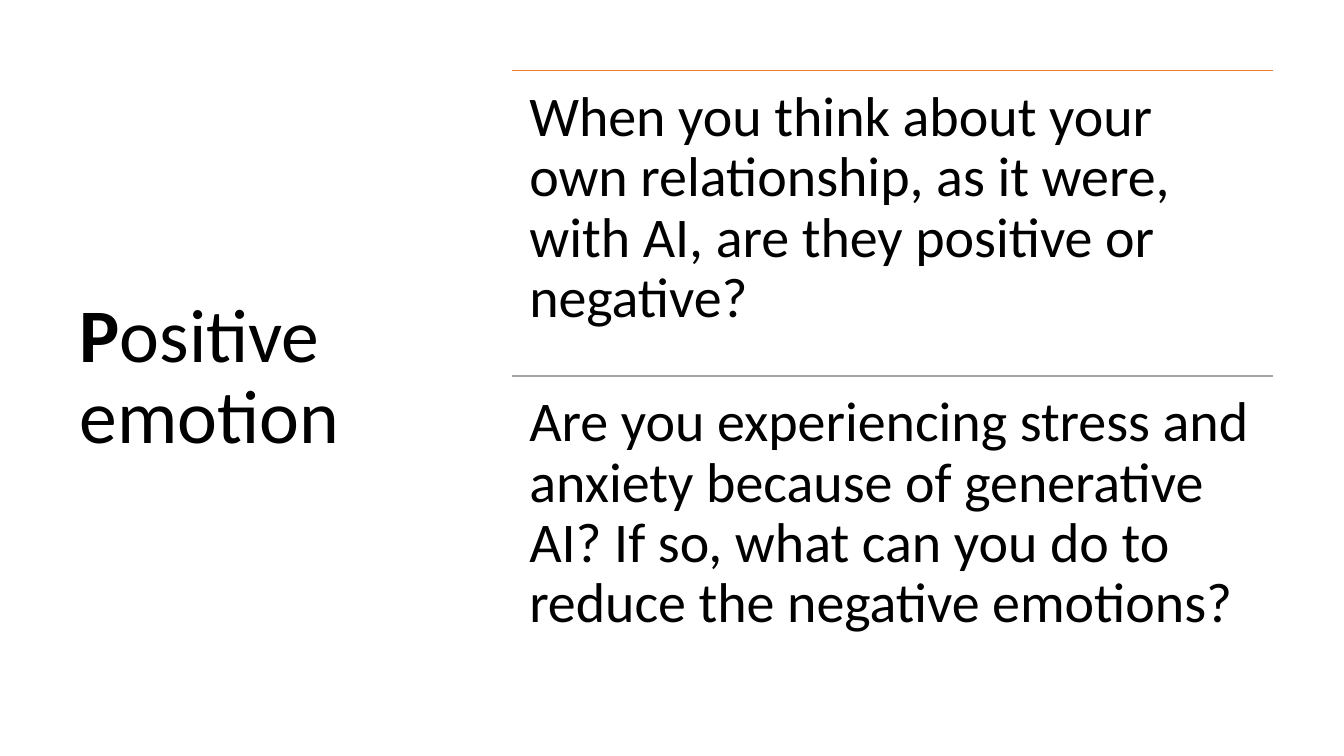
from lxml import etree
from pptx import Presentation
from pptx import util as u
from pptx.dml.color import RGBColor
from pptx.enum import shapes, text
from pptx.oxml.ns import qn

BLACK = RGBColor(0x00, 0x00, 0x00)
ORANGE = RGBColor(0xED, 0x7D, 0x31)
GRAY = RGBColor(0xA5, 0xA5, 0xA5)

TITLE = [("P", True), ("ositive emotion", False)]
QUESTIONS = [
    ("When you think about your own relationship, as it were, with AI, "
     "are they positive or negative?", ORANGE),
    ("Are you experiencing stress and anxiety because of generative AI? "
     "If so, what can you do to reduce the negative emotions?", GRAY),
]

TOP = 50.4
TITLE_LEFT, TITLE_WIDTH, TITLE_HEIGHT = 49.7, 269.3, 440
LIST_LEFT, LIST_WIDTH, ROW_HEIGHT = 365.8, 543.6, 218.2


def add_text(page, spans, left, top, width, height, size=40,
             inset_x=12.24, inset_y=12.24, anchor=text.MSO_ANCHOR.TOP):
    box = page.shapes.add_textbox(u.Pt(left), u.Pt(top), u.Pt(width), u.Pt(height))
    frame = box.text_frame
    frame.word_wrap = True
    frame.vertical_anchor = anchor
    frame.margin_left = frame.margin_right = u.Pt(inset_x)
    frame.margin_top = frame.margin_bottom = u.Pt(inset_y)
    para = frame.paragraphs[0]
    para.line_spacing = 0.9
    for words, bold in spans:
        span = para.add_run()
        span.text = words
        span.font.name = "Calibri"
        span.font.size = u.Pt(size)
        span.font.bold = bold
        span.font.color.rgb = BLACK


def add_rule(page, left, top, width, color):
    rule = page.shapes.add_connector(
        shapes.MSO_CONNECTOR.STRAIGHT,
        u.Pt(left), u.Pt(top), u.Pt(left + width), u.Pt(top))
    rule.line.color.rgb = color
    rule.line.width = u.Pt(1)
    etree.SubElement(rule.element.spPr, qn("a:effectLst"))


def main():
    deck = Presentation()
    deck.slide_width, deck.slide_height = u.Pt(960), u.Pt(540)
    page = deck.slides.add_slide(deck.slide_layouts[6])

    add_text(page, TITLE, TITLE_LEFT, TOP, TITLE_WIDTH, TITLE_HEIGHT, size=54,
             inset_x=7.2, inset_y=3.6, anchor=text.MSO_ANCHOR.MIDDLE)
    for row, (question, color) in enumerate(QUESTIONS):
        top = TOP + row * ROW_HEIGHT
        add_rule(page, LIST_LEFT, top, LIST_WIDTH, color)
        add_text(page, [(question, False)], LIST_LEFT, top, LIST_WIDTH, ROW_HEIGHT)

    deck.save("out.pptx")


if __name__ == "__main__":
    main()
